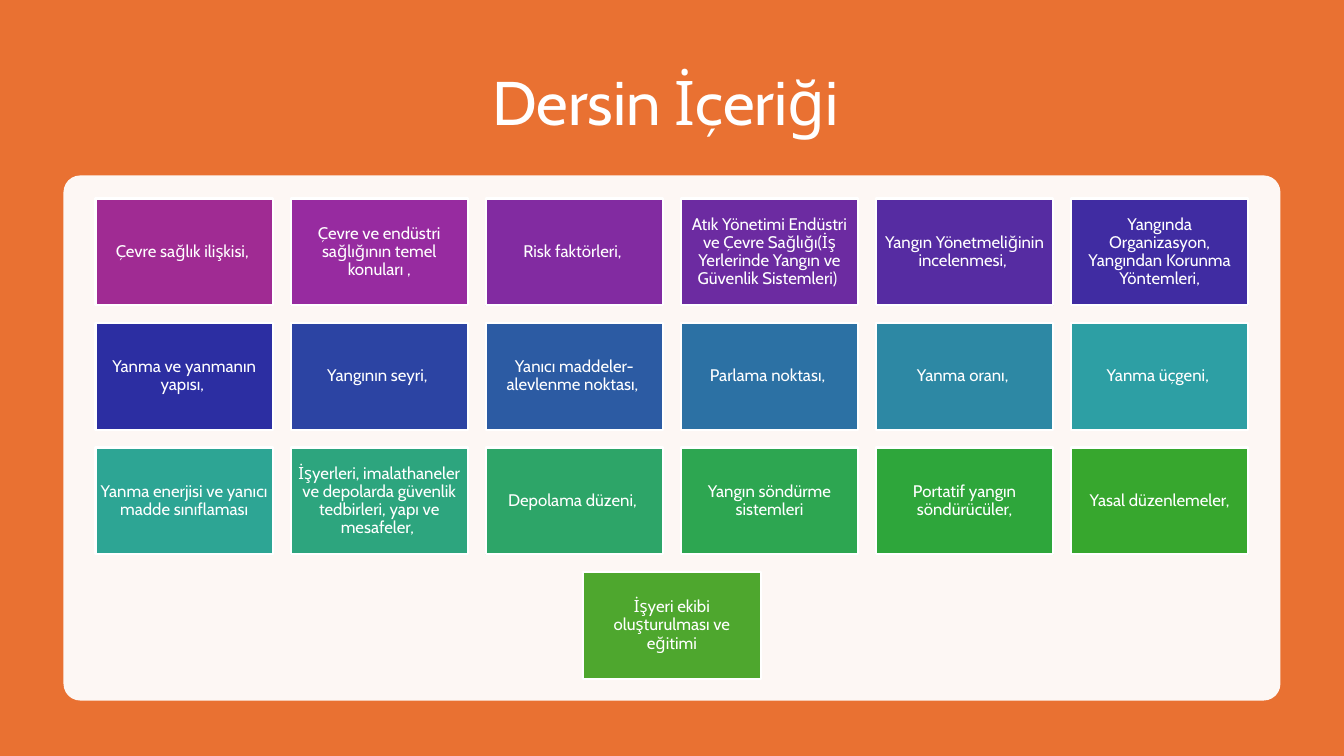
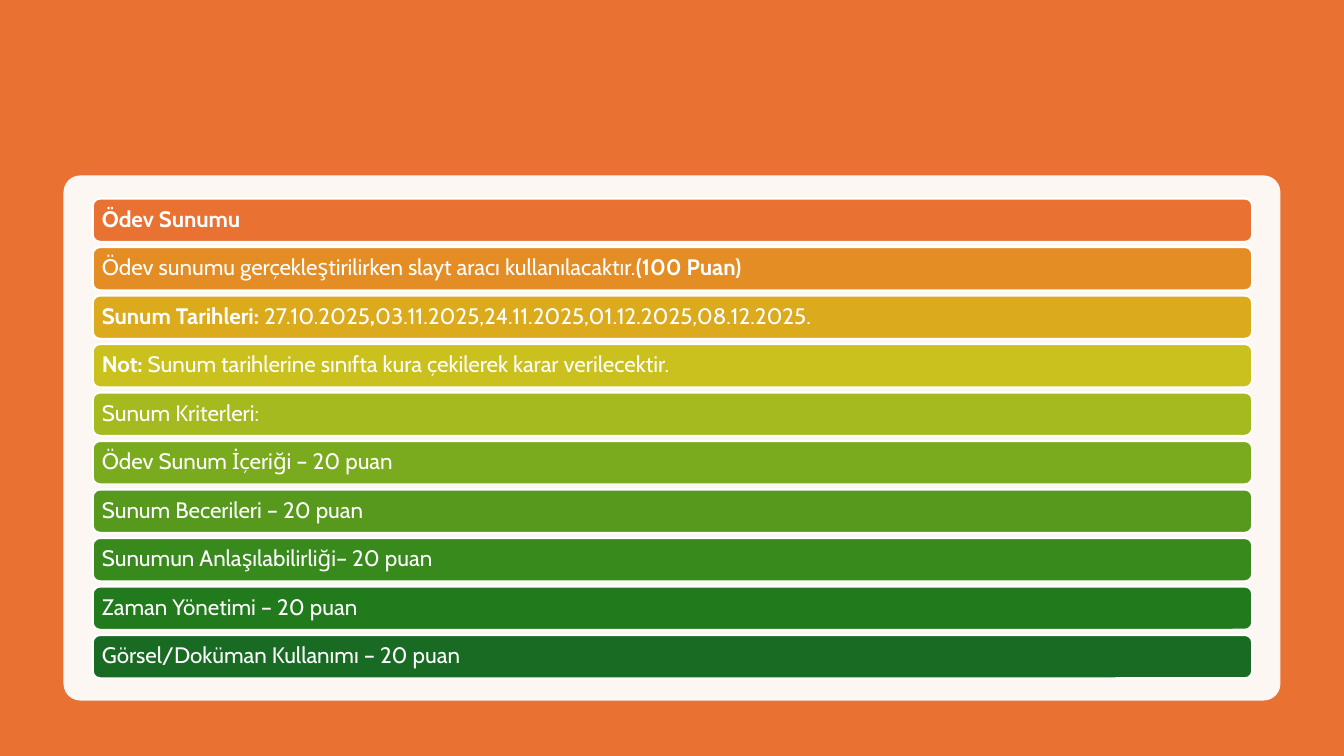
from colorsys import hls_to_rgb, rgb_to_hls

from lxml.etree import SubElement
from pptx import Presentation
from pptx.dml.color import RGBColor
from pptx.enum.shapes import MSO_SHAPE as Shape
from pptx.enum.text import MSO_ANCHOR as Anchor, PP_ALIGN as Align
from pptx.oxml.ns import qn
from pptx.util import Inches, Pt

WHITE = RGBColor(0xFF, 0xFF, 0xFF)
ORANGE = RGBColor(0xE9, 0x71, 0x32)
PURPLE = RGBColor(0xA0, 0x2B, 0x93)
GREEN = RGBColor(0x4E, 0xA7, 0x2E)
DARK_GREEN = RGBColor(0x19, 0x6B, 0x24)

TOPICS = [
    "Çevre sağlık ilişkisi, ",
    "Çevre ve endüstri sağlığının temel konuları ,",
    "Risk faktörleri, ",
    "Atık Yönetimi Endüstri ve Çevre Sağlığı(İş Yerlerinde Yangın ve Güvenlik Sistemleri) ",
    "Yangın Yönetmeliğinin incelenmesi, ",
    "Yangında Organizasyon, Yangından Korunma Yöntemleri,",
    "Yanma ve yanmanın yapısı, ",
    "Yangının seyri, ",
    "Yanıcı maddeler-alevlenme noktası, ",
    "Parlama noktası, ",
    "Yanma oranı, ",
    "Yanma üçgeni, ",
    "Yanma enerjisi ve yanıcı madde sınıflaması",
    "İşyerleri, imalathaneler ve depolarda güvenlik tedbirleri, yapı ve mesafeler, ",
    "Depolama düzeni, ",
    "Yangın söndürme sistemleri",
    "Portatif yangın söndürücüler,",
    "Yasal düzenlemeler,",
    "İşyeri ekibi oluşturulması ve eğitimi",
]

ASSIGNMENT = [
    [("Ödev Sunumu", True)],
    [("Ödev sunumu gerçekleştirilirken slayt aracı kullanılacaktır.", False),
     ("(100 Puan)", True)],
    [("Sunum Tarihleri: ", True), ("27.10.2025", False), (",", True),
     ("03.11.2025,24.11.2025,01.12.2025,08.12.2025.", False)],
    [("Not: ", True),
     ("Sunum tarihlerine sınıfta kura çekilerek karar verilecektir.", False)],
    [("Sunum Kriterleri:", False)],
    [("Ödev Sunum İçeriği – 20 puan", False)],
    [("Sunum Becerileri – 20 puan", False)],
    [("Sunumun Anlaşılabilirliği– 20 puan", False)],
    [("Zaman Yönetimi – 20 puan", False)],
    [("Görsel/Doküman Kullanımı – 20 puan", False)],
]


def blend(start, end, count):
    first, last = (rgb_to_hls(*(part / 255 for part in colour))
                   for colour in (start, end))
    for step in range(count):
        share = step / (count - 1)
        mixed = hls_to_rgb(*(a + (b - a) * share for a, b in zip(first, last)))
        yield RGBColor(*(round(part * 255) for part in mixed))


class Deck:
    FONT = "Cabin"
    WIDTH, HEIGHT = 13.33, 7.5
    TOP, DEPTH = 1.97, 4.76
    TITLE = {"size": Pt(44), "align": Align.CENTER, "inset": 0.1}
    TILE = {"size": Pt(12), "align": Align.CENTER, "inset": 0.05}
    BAR = {"size": Pt(16), "align": Align.LEFT, "inset": 0.07}

    def __init__(self):
        self.show = Presentation()
        self.show.slide_width = Inches(self.WIDTH)
        self.show.slide_height = Inches(self.HEIGHT)
        self.slide = None

    def new_slide(self):
        self.slide = self.show.slides.add_slide(self.show.slide_layouts[6])
        backdrop = self.slide.background.fill
        backdrop.solid()
        backdrop.fore_color.rgb = ORANGE
        self.panel()

    def box(self, kind, area, colour):
        box = self.slide.shapes.add_shape(kind, *map(Inches, area))
        box.shadow.inherit = False
        box.fill.solid()
        box.fill.fore_color.rgb = colour
        box.line.color.rgb = WHITE
        box.line.width = Pt(1.5)
        return box

    def panel(self):
        panel = self.box(Shape.ROUNDED_RECTANGLE, (0.63, 1.74, 12.07, 5.21), WHITE)
        panel.adjustments[0] = 0.032
        panel.line.fill.background()
        tint = panel.element.spPr.find(qn("a:solidFill")).find(qn("a:srgbClr"))
        SubElement(tint, qn("a:alpha"), val="95000")

    def put_text(self, holder, runs, style):
        frame = holder.text_frame
        inset = Inches(style["inset"])
        layout = {"word_wrap": True, "vertical_anchor": Anchor.MIDDLE,
                  "margin_left": inset, "margin_right": inset,
                  "margin_top": inset, "margin_bottom": inset}
        for name, value in layout.items():
            setattr(frame, name, value)
        line = frame.paragraphs[0]
        line.alignment = style["align"]
        line.line_spacing = 0.9
        for text, bold in runs:
            run = line.add_run()
            run.text = text
            look = {"name": self.FONT, "size": style["size"], "bold": bold}
            for name, value in look.items():
                setattr(run.font, name, value)
            run.font.color.rgb = WHITE

    def title(self, text):
        heading = self.slide.shapes.add_textbox(*map(Inches, (0.92, 0.5, 11.5, 1.1)))
        self.put_text(heading, [(text, False)], self.TITLE)

    def tiles(self, topics, columns, start, end):
        width, height, gap = 1.76, 1.06, 0.175
        colours = blend(start, end, len(topics))
        for index, (topic, colour) in enumerate(zip(topics, colours)):
            row, column = divmod(index, columns)
            in_row = min(columns, len(topics) - row * columns)
            row_width = in_row * (width + gap) - gap
            left = (self.WIDTH - row_width) / 2 + column * (width + gap)
            top = self.TOP + row * (height + gap)
            tile = self.box(Shape.RECTANGLE, (left, top, width, height), colour)
            self.put_text(tile, [(topic, False)], self.TILE)

    def bars(self, lines, start, end):
        height = 0.43
        pitch = (self.DEPTH - height) / (len(lines) - 1)
        colours = blend(start, end, len(lines))
        for row, (runs, colour) in enumerate(zip(lines, colours)):
            area = (0.92, self.TOP + row * pitch, 11.5, height)
            bar = self.box(Shape.ROUNDED_RECTANGLE, area, colour)
            self.put_text(bar, runs, self.BAR)


def main():
    deck = Deck()
    deck.new_slide()
    deck.title("Dersin İçeriği ")
    deck.tiles(TOPICS, 6, PURPLE, GREEN)
    deck.new_slide()
    deck.bars(ASSIGNMENT, ORANGE, DARK_GREEN)
    deck.show.save("out.pptx")


if __name__ == "__main__":
    main()
